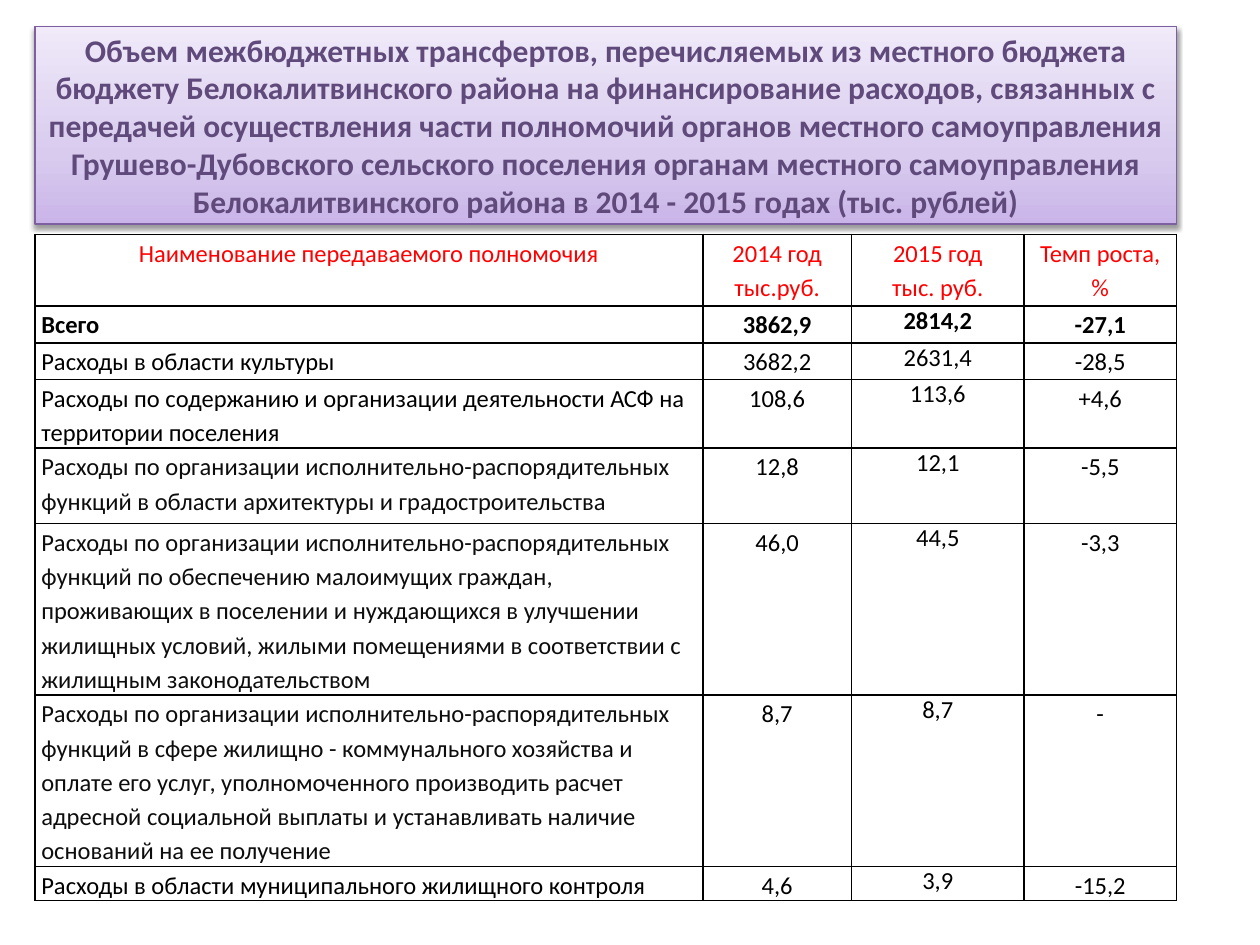
from dataclasses import dataclass

from lxml import etree
from pptx import Presentation
from pptx.dml.color import RGBColor
from pptx.enum.text import MSO_ANCHOR, MSO_AUTO_SIZE, PP_ALIGN
from pptx.util import Pt

CENTER, LEFT = PP_ALIGN.CENTER, PP_ALIGN.LEFT
NS = "http://schemas.openxmlformats.org/drawingml/2006/main"
TITLE_ONLY = 5


@dataclass(frozen=True)
class Theme:
    font: str = "Calibri"
    title_size: float = 18
    table_size: float = 14
    title: str = "604A7B"
    title_line: str = "7D60A0"
    gradient: tuple = ((0, "C9B5E8"), (35, "D8CBEE"), (100, "F0EAF9"))
    header: str = "FF0000"
    text: str = "000000"
    soft_text: str = "0D0D0D"
    border: str = "000000"


THEME = Theme()

TITLE = (
    "Объем межбюджетных трансфертов, перечисляемых из местного бюджета бюджету "
    "Белокалитвинского района на финансирование расходов, связанных с передачей "
    "осуществления части полномочий органов местного самоуправления "
    "Грушево-Дубовского сельского поселения органам местного самоуправления "
    "Белокалитвинского района в 2014 - 2015 годах (тыс. рублей)"
)
FUNCTIONS = "Расходы по организации исполнительно-распорядительных функций "
ROWS = [
    ("Наименование передаваемого полномочия", "2014 год тыс.руб.",
     "2015 год\vтыс. руб.", "Темп роста, %"),
    ("Всего", "3862,9", "2814,2", "-27,1"),
    ("Расходы в области культуры", "3682,2", "2631,4", "-28,5"),
    ("Расходы по содержанию и организации деятельности АСФ на территории поселения",
     "108,6", "113,6", "+4,6"),
    (FUNCTIONS + "в области архитектуры и градостроительства", "12,8", "12,1", "-5,5"),
    (FUNCTIONS + "по обеспечению малоимущих граждан, проживающих в поселении и "
     "нуждающихся в улучшении жилищных условий, жилыми помещениями в соответствии "
     "с жилищным законодательством", "46,0", "44,5", "-3,3"),
    (FUNCTIONS + "в сфере жилищно - коммунального хозяйства и оплате его услуг, "
     "уполномоченного производить расчет адресной социальной выплаты и "
     "устанавливать наличие оснований на ее получение", "8,7", "8,7", "-"),
    ("Расходы в области муниципального жилищного контроля", "4,6", "3,9", "-15,2"),
]
COL_WIDTHS = (381.6, 85, 98.6, 87.1)
ROW_HEIGHTS = (41, 20.9, 20.9, 33.8, 43.2, 85.7, 85.7, 6.5)
YEAR_2015 = 2


def add_xml(parent, xml):
    """Append a DrawingML fragment written with the a: prefix."""
    tag, rest = xml.split(" ", 1)
    parent.append(etree.fromstring(f'{tag} xmlns:a="{NS}" {rest}'))


def add_text(p, text, size, color, bold=False):
    """Add runs to a paragraph, with a line break at each vertical tab."""
    for i, part in enumerate(text.split("\v")):
        if i:
            p.add_line_break()
        r = p.add_run()
        r.text = part
        r.font.name, r.font.size, r.font.bold = THEME.font, Pt(size), bold
        r.font.color.rgb = RGBColor.from_string(color)


def add_title(s, x, y, w, h):
    """Title on a plate with two snipped corners."""
    sp = s.shapes.title
    sp.left, sp.top, sp.width, sp.height = Pt(x), Pt(y), Pt(w), Pt(h)
    sppr = sp._element.spPr

    # Outline, gradient, line and shadow, in schema order
    add_xml(sppr, '<a:prstGeom prst="snip2DiagRect"><a:avLst/></a:prstGeom>')
    stops = "".join(
        f'<a:gs pos="{pos * 1000}"><a:srgbClr val="{color}"/></a:gs>'
        for pos, color in THEME.gradient)
    add_xml(sppr, f'<a:gradFill rotWithShape="1"><a:gsLst>{stops}</a:gsLst>'
                  '<a:lin ang="16200000" scaled="0"/></a:gradFill>')
    sp.line.color.rgb = RGBColor.from_string(THEME.title_line)
    sp.line.width = Pt(0.75)
    add_xml(sppr, '<a:effectLst ><a:outerShdw '
                  f'blurRad="{Pt(3.1)}" dist="{Pt(1.6)}" dir="5400000" rotWithShape="0">'
                  '<a:srgbClr val="000000"><a:alpha val="38000"/></a:srgbClr>'
                  '</a:outerShdw></a:effectLst>')

    tf = sp.text_frame
    tf.word_wrap, tf.auto_size = True, MSO_AUTO_SIZE.NONE
    tf.vertical_anchor = MSO_ANCHOR.MIDDLE
    p = tf.paragraphs[0]
    p.alignment = CENTER
    add_text(p, TITLE, THEME.title_size, THEME.title, bold=True)


def format_cell(cell):
    """Thin borders, no fill, narrow margins."""
    cell.margin_left = cell.margin_right = Pt(3.6)
    cell.margin_top = cell.margin_bottom = 0
    tcpr = cell._tc.get_or_add_tcPr()
    for side in "LRTB":
        add_xml(tcpr, f'<a:ln{side} w="{Pt(1)}"><a:solidFill>'
                      f'<a:srgbClr val="{THEME.border}"/></a:solidFill></a:ln{side}>')
    cell.fill.background()


def cell_color(row, col, text):
    if row == 0:
        return THEME.header
    return THEME.soft_text if col == 0 and text.startswith(FUNCTIONS) else THEME.text


def add_budget_table(s, x, y):
    """Transfers by delegated power, with both years and the growth rate."""
    table = s.shapes.add_table(
        len(ROWS), len(COL_WIDTHS), Pt(x), Pt(y),
        Pt(sum(COL_WIDTHS)), Pt(sum(ROW_HEIGHTS))).table
    table.first_row = table.horz_banding = False
    for column, width in zip(table.columns, COL_WIDTHS):
        column.width = Pt(width)
    for row, height in zip(table.rows, ROW_HEIGHTS):
        row.height = Pt(height)

    for i, values in enumerate(ROWS):
        for j, text in enumerate(values):
            cell = table.cell(i, j)
            format_cell(cell)
            p = cell.text_frame.paragraphs[0]
            p.alignment = LEFT if i and j == 0 else CENTER
            if i == 0 or j != YEAR_2015:
                p.line_spacing = 1.15
            add_text(p, text, THEME.table_size, cell_color(i, j, text), bold=i == 1)


def main():
    prs = Presentation()
    prs.slide_width, prs.slide_height = Pt(720), Pt(540)
    s = prs.slides.add_slide(prs.slide_layouts[TITLE_ONLY])
    add_title(s, 20, 15, 652.3, 113)
    add_budget_table(s, 20, 134)
    prs.save("out.pptx")


if __name__ == "__main__":
    main()
